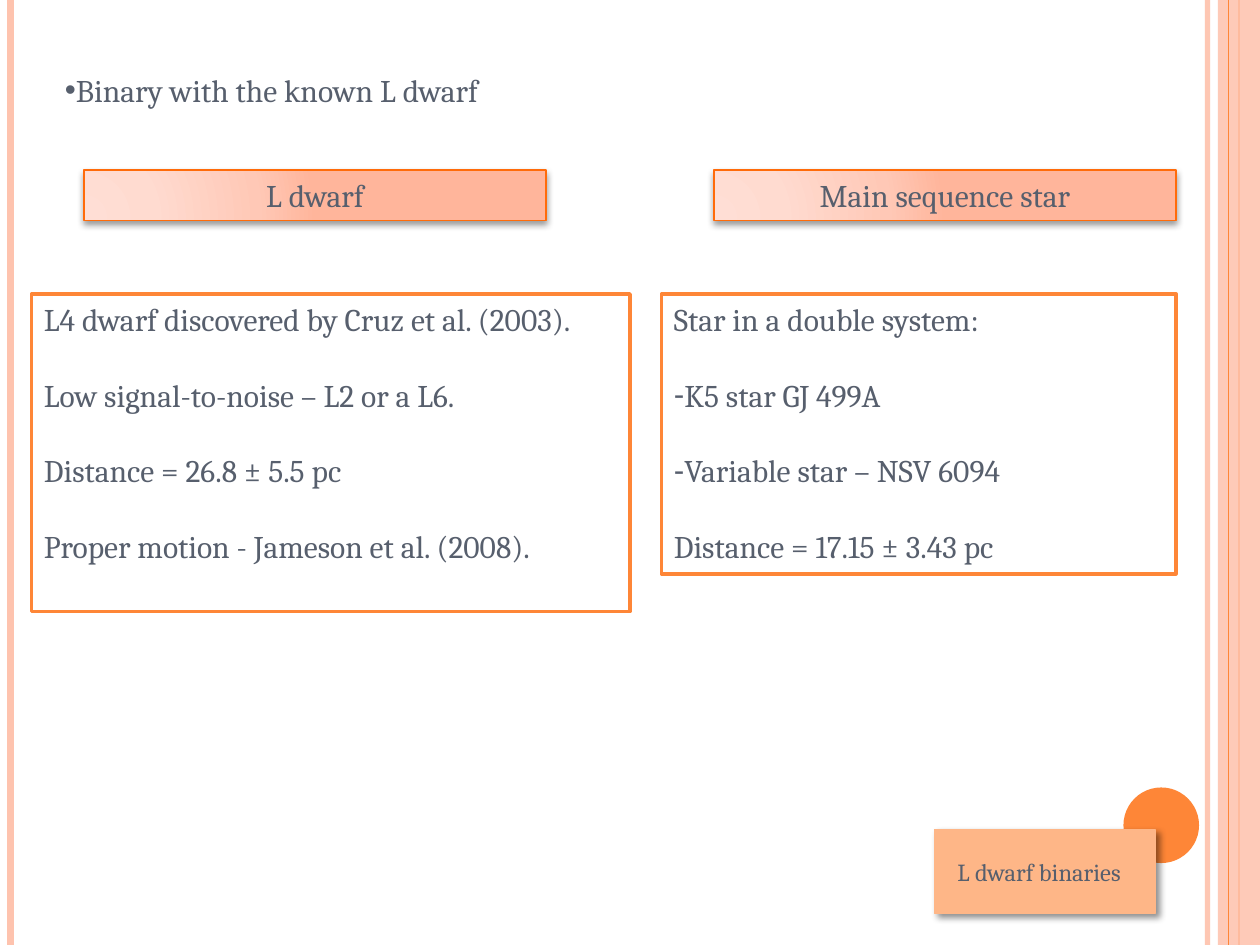
from lxml import etree
from pptx import Presentation
from pptx.dml.color import RGBColor
from pptx.enum.shapes import MSO_CONNECTOR, MSO_SHAPE
from pptx.enum.text import MSO_ANCHOR, PP_ALIGN
from pptx.oxml.ns import qn
from pptx.util import Pt

RECTANGLE, OVAL = MSO_SHAPE.RECTANGLE, MSO_SHAPE.OVAL
STRAIGHT = MSO_CONNECTOR.STRAIGHT
LEFT, CENTER = PP_ALIGN.LEFT, PP_ALIGN.CENTER
TOP = MSO_ANCHOR.TOP

WHITE = RGBColor(0xFF, 0xFF, 0xFF)
BLACK = RGBColor(0x00, 0x00, 0x00)
SLATE = RGBColor(0x57, 0x5F, 0x6D)
ORANGE = RGBColor(0xFE, 0x86, 0x37)
DEEP_ORANGE = RGBColor(0xFF, 0x6B, 0x0A)
LIGHT_ORANGE = RGBColor(0xFE, 0xB6, 0x87)
PINK = RGBColor(0xFE, 0xC3, 0xAE)
HEADER_STOPS = [
    (0, RGBColor(0xFF, 0xDE, 0xD5)),
    (30, RGBColor(0xFF, 0xDB, 0xD0)),
    (75, RGBColor(0xFF, 0xC8, 0xB6)),
    (100, RGBColor(0xFF, 0xB5, 0x9B)),
]

FONT = "Cambria"
WIDTH, HEIGHT = 720, 540
LINE_HEIGHT = 21.6


def add_child(parent, tag, **attributes):
    child = etree.SubElement(parent, qn(tag))
    for name, value in attributes.items():
        child.set(name, str(value))
    return child


def set_alpha(fill, percent):
    color = fill._xPr.find(qn("a:solidFill"))[0]
    add_child(color, "a:alpha", val=percent * 1000)


def set_gradient(shape, stops):
    """Circular gradient centred near the lower left."""
    shape.fill.background()
    properties = shape._element.spPr
    gradient = etree.Element(qn("a:gradFill"), rotWithShape="1")
    stop_list = add_child(gradient, "a:gsLst")
    for position, color in stops:
        stop = add_child(stop_list, "a:gs", pos=position * 1000)
        add_child(stop, "a:srgbClr", val=color)
    path = add_child(gradient, "a:path", path="circle")
    add_child(path, "a:fillToRect", l=5000, t=100000, r=120000, b=10000)
    properties.replace(properties.find(qn("a:noFill")), gradient)


def set_shadow(shape, alpha, blur, distance, angle):
    effects = shape._element.spPr.find(qn("a:effectLst"))
    shadow = add_child(effects, "a:outerShdw", blurRad=Pt(blur), dist=Pt(distance),
                       dir=angle * 60000, algn="ctr", rotWithShape=0)
    color = add_child(shadow, "a:srgbClr", val=BLACK)
    add_child(color, "a:alpha", val=alpha * 1000)


def set_bullet(paragraph, character):
    properties = paragraph._p.get_or_add_pPr()
    properties.set("marL", "0")
    properties.set("indent", "0")
    add_child(properties, "a:buFont", typeface="Arial")
    add_child(properties, "a:buChar", char=character)


def write_text(shape, lines, size=18, align=LEFT, gap=0, bullet=None, bulleted=()):
    """Write one paragraph a line; lines in bulleted get the bullet."""
    frame = shape.text_frame
    frame.word_wrap = True
    frame.vertical_anchor = TOP
    for index, line in enumerate(lines):
        paragraph = frame.add_paragraph() if index else frame.paragraphs[0]
        paragraph.alignment = align
        paragraph.space_before = Pt(gap if index else 0)
        if index in bulleted:
            set_bullet(paragraph, bullet)
        run = paragraph.add_run()
        run.text = line
        run.font.name = FONT
        run.font.size = Pt(size)
        run.font.color.rgb = SLATE


def add_box(slide, kind, left, top, width, height, fill=WHITE, line=None, weight=1):
    shape = slide.shapes.add_shape(kind, Pt(left), Pt(top), Pt(width), Pt(height))
    shape.shadow.inherit = False
    shape.fill.solid()
    shape.fill.fore_color.rgb = fill
    if line is None:
        shape.line.fill.background()
    else:
        shape.line.color.rgb = line
        shape.line.width = Pt(weight)
    return shape


def add_label(slide, left, top, width, height, lines, **text_format):
    label = slide.shapes.add_textbox(Pt(left), Pt(top), Pt(width), Pt(height))
    write_text(label, lines, **text_format)


def add_rule(slide, x, color, weight, alpha=100):
    rule = slide.shapes.add_connector(STRAIGHT, Pt(x), Pt(0), Pt(x), Pt(HEIGHT))
    rule.line.color.rgb = color
    rule.line.width = Pt(weight)
    if alpha < 100:
        set_alpha(rule.line.fill, alpha)
    add_child(rule._element.spPr, "a:effectLst")


def add_header(slide, left, text):
    header = add_box(slide, RECTANGLE, left, 97, 264, 29, line=DEEP_ORANGE)
    set_gradient(header, HEADER_STOPS)
    set_shadow(header, alpha=40, blur=4, distance=2, angle=90)
    write_text(header, [text], align=CENTER)


def add_panel(slide, left, width, height, lines, **text_format):
    panel = add_box(slide, RECTANGLE, left, 168, width, height, line=ORANGE, weight=2)
    write_text(panel, lines, gap=LINE_HEIGHT, **text_format)


def add_frame(slide):
    add_rule(slide, 690, PINK, 3, alpha=93)
    add_rule(slide, 6, PINK, 4.5)
    add_rule(slide, 708, ORANGE, 1.5)
    band = add_box(slide, RECTANGLE, 696, 0, 24, HEIGHT, fill=PINK)
    set_alpha(band.fill, 87)
    add_rule(slide, 702, ORANGE, 0.75)
    add_box(slide, OVAL, 642, 450, 43.2, 43.2, fill=ORANGE)


def main():
    presentation = Presentation()
    presentation.slide_width, presentation.slide_height = Pt(WIDTH), Pt(HEIGHT)
    slide = presentation.slides.add_slide(presentation.slide_layouts[6])

    # Side bands and corner disc
    add_frame(slide)

    # Heading
    add_label(slide, 30, 37, 348, 29, ["Binary with the known L dwarf"],
              bullet="•", bulleted=[0])

    # Section tag
    tag = add_box(slide, RECTANGLE, 534, 474, 126, 48, fill=LIGHT_ORANGE, line=LIGHT_ORANGE)
    set_shadow(tag, alpha=43, blur=4, distance=3, angle=45)
    add_label(slide, 540, 486, 126, 24.2, ["L dwarf binaries"], size=14)

    # The two components of the binary
    add_panel(slide, 18, 342, 181.4, [
        "L4 dwarf discovered by Cruz et al. (2003).",
        "Low signal-to-noise – L2 or a L6.",
        "Distance = 26.8 ± 5.5 pc",
        "Proper motion - Jameson et al. (2008).",
    ])
    add_header(slide, 48, "L dwarf")
    add_header(slide, 408, "Main sequence star")
    add_panel(slide, 378, 294, 160, [
        "Star in a double system:",
        "K5 star GJ 499A",
        "Variable star – NSV 6094",
        "Distance = 17.15 ± 3.43 pc",
    ], bullet="-", bulleted=[1, 2])

    presentation.save("out.pptx")


if __name__ == "__main__":
    main()
